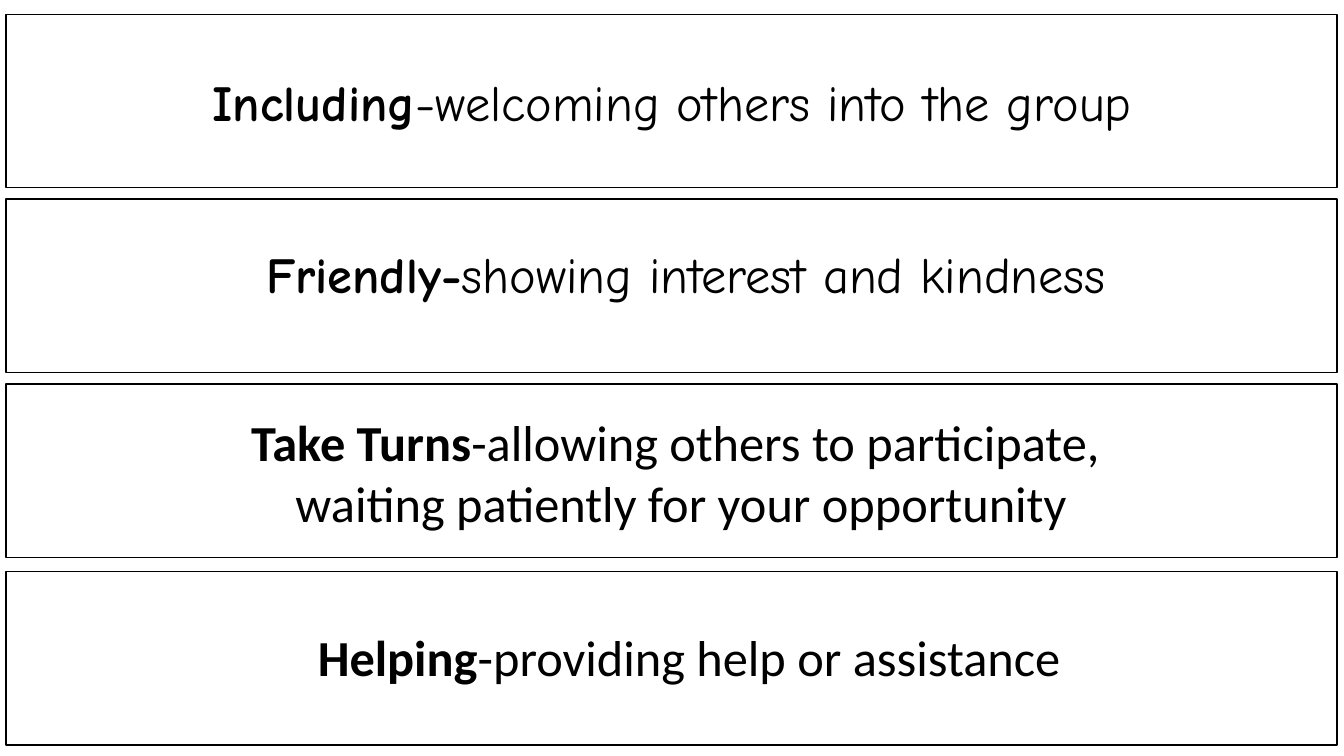
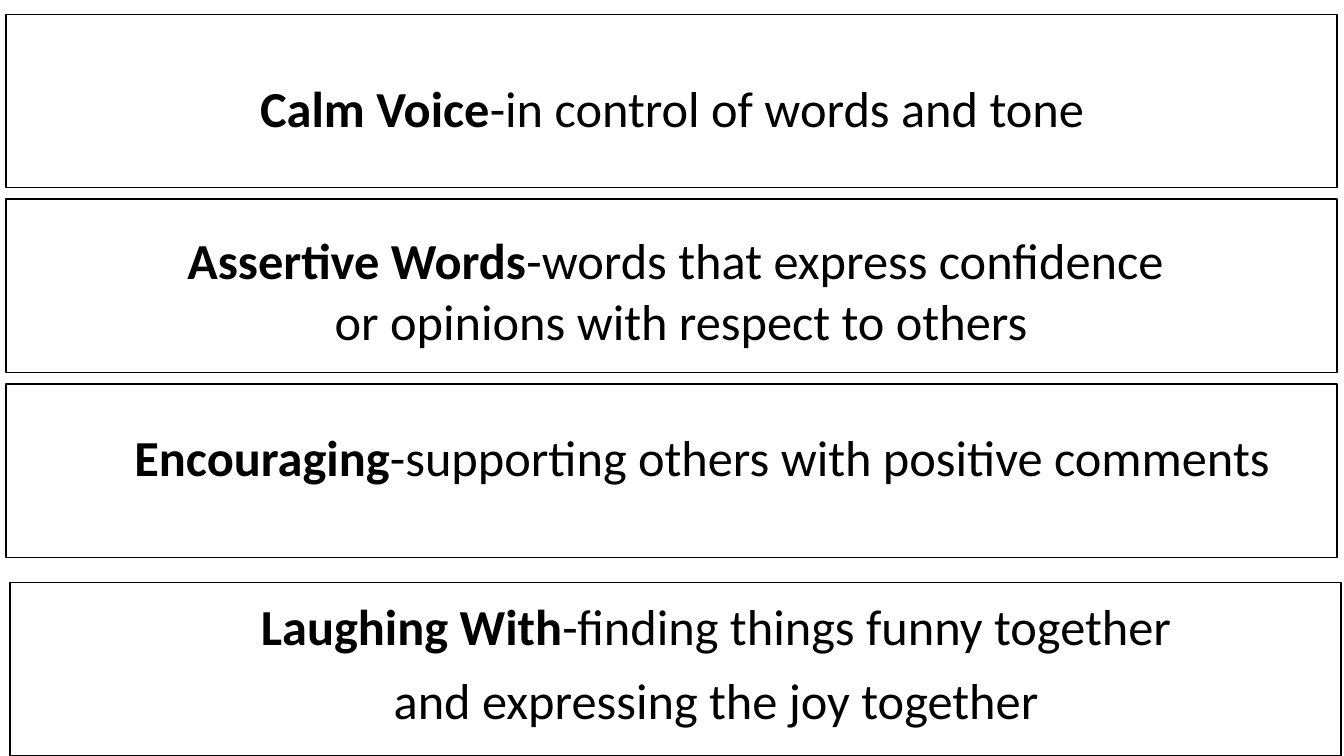
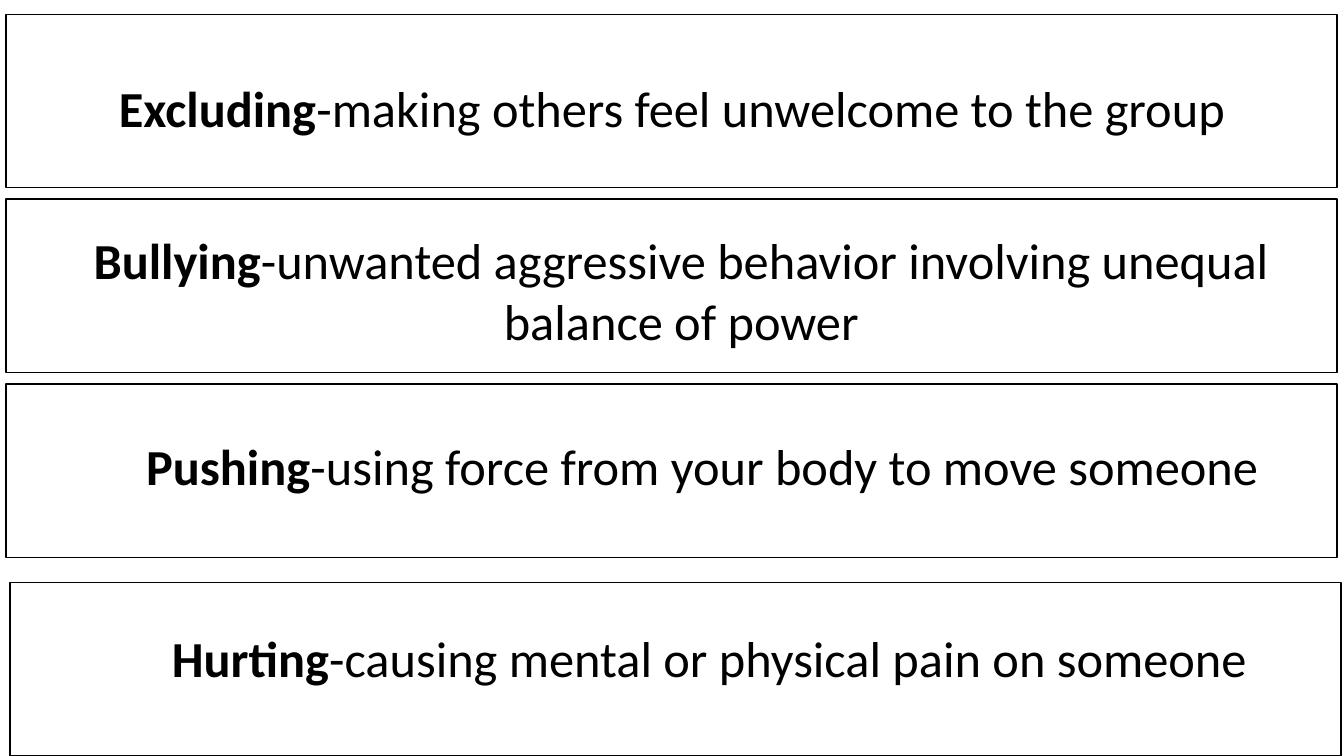
from dataclasses import dataclass

from pptx import Presentation
from pptx.dml.color import RGBColor
from pptx.enum.shapes import MSO_SHAPE
from pptx.enum.text import MSO_AUTO_SIZE, PP_ALIGN
from pptx.util import Cm, Pt

INK = "000000"
PAPER = "FFFFFF"
CARD_WIDTH, CARD_HEIGHT = 33.55, 4.37
CARD_LEFT, CARD_TOP, CARD_STEP = 0.15, 0.36, 4.66
TEXT_WIDTH = 33.12
FONT_SIZE = 36


@dataclass
class Card:
    term: str
    meaning: str
    indent: float
    drop: float
    height: float = 1.8
    second_line: str = ""
    font: str = "Calibri"
    line_spacing: float = 1.0
    space_after: int = 0


@dataclass
class CardPage:
    cards: list
    last_left: float
    last_top: float


PAGES = [
    CardPage([
        Card("Including", "-welcoming others into the group", 0.23, 1.32, font="Comic Neue"),
        Card("Friendly-", "showing interest and kindness", 0.58, 0.97, font="Comic Neue"),
        Card("Take Turns", "-allowing others to participate, ", 0.46, 0.56, 3.33,
             "waiting patiently for your opportunity"),
        Card("Helping", "-providing help or assistance", 0.66, 1.02, 1.93,
             line_spacing=1.15, space_after=10),
    ], CARD_LEFT, 14.4),
    CardPage([
        Card("Calm Voice", "-in control of words and tone", 0.23, 1.24, 1.93,
             line_spacing=1.15, space_after=10),
        Card("Assertive Words", "-words that express confidence ", 0.46, 0.64, 3.33,
             "or opinions with respect to others"),
        Card("Encouraging", "-supporting others with positive comments", 0.99, 0.94),
        Card("Laughing With", "-finding things funny together", 1.24, 0.18, 3.68,
             "and expressing the joy together", space_after=10),
    ], 0.25, 14.68),
    CardPage([
        Card("Excluding", "-making others feel unwelcome to the group", 0.23, 1.24, 1.93,
             line_spacing=1.15, space_after=10),
        Card("Bullying", "-unwanted aggressive behavior involving unequal balance of power",
             0.46, 0.64, 3.33),
        Card("Pushing", "-using force from your body to move someone", 0.99, 0.94, 1.93,
             line_spacing=1.15, space_after=10),
        Card("Hurting", "-causing mental or physical pain on someone", 1.07, 0.99,
             space_after=10),
    ], 0.25, 14.68),
]


def color(value):
    return RGBColor.from_string(value)


def add_span(para, text, font, bold=False):
    span = para.add_run()
    span.text = text
    span.font.name = font
    span.font.size = Pt(FONT_SIZE)
    span.font.bold = bold
    span.font.color.rgb = color(INK)


def add_frame(page, left, top):
    frame = page.shapes.add_shape(
        MSO_SHAPE.RECTANGLE, Cm(left), Cm(top), Cm(CARD_WIDTH), Cm(CARD_HEIGHT))
    frame.shadow.inherit = False
    frame.fill.solid()
    frame.fill.fore_color.rgb = color(PAPER)
    frame.line.color.rgb = color(INK)
    frame.line.width = Pt(1)


def add_definition(page, card, left, top):
    box = page.shapes.add_textbox(
        Cm(left + card.indent), Cm(top + card.drop), Cm(TEXT_WIDTH), Cm(card.height))
    text_frame = box.text_frame
    text_frame.word_wrap = True
    text_frame.auto_size = MSO_AUTO_SIZE.SHAPE_TO_FIT_TEXT
    para = text_frame.paragraphs[0]
    para.line_spacing = card.line_spacing
    para.space_after = Pt(card.space_after)
    add_span(para, card.term, card.font, bold=True)
    add_span(para, card.meaning, card.font)
    if card.second_line:
        add_span(text_frame.add_paragraph(), card.second_line, card.font)
    for para in text_frame.paragraphs:
        para.alignment = PP_ALIGN.CENTER


def add_card_page(deck, content):
    page = deck.slides.add_slide(deck.slide_layouts[6])
    places = [(CARD_LEFT, CARD_TOP + row * CARD_STEP)
              for row in range(len(content.cards) - 1)]
    places.append((content.last_left, content.last_top))
    for card, (left, top) in zip(content.cards, places):
        add_frame(page, left, top)
        add_definition(page, card, left, top)


def main():
    deck = Presentation()
    deck.slide_width, deck.slide_height = Cm(33.87), Cm(19.05)
    for content in PAGES:
        add_card_page(deck, content)
    deck.save("out.pptx")


if __name__ == "__main__":
    main()
